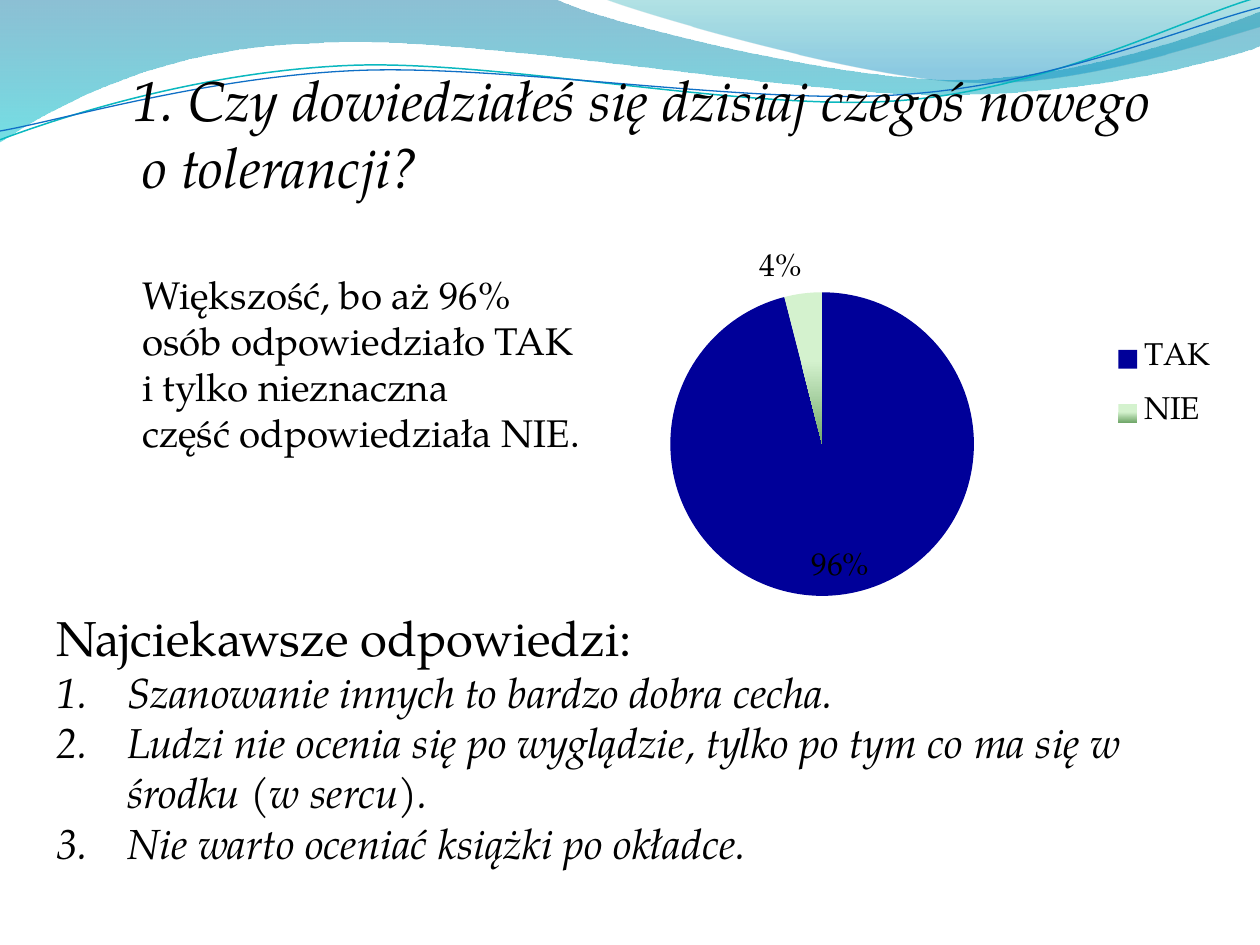
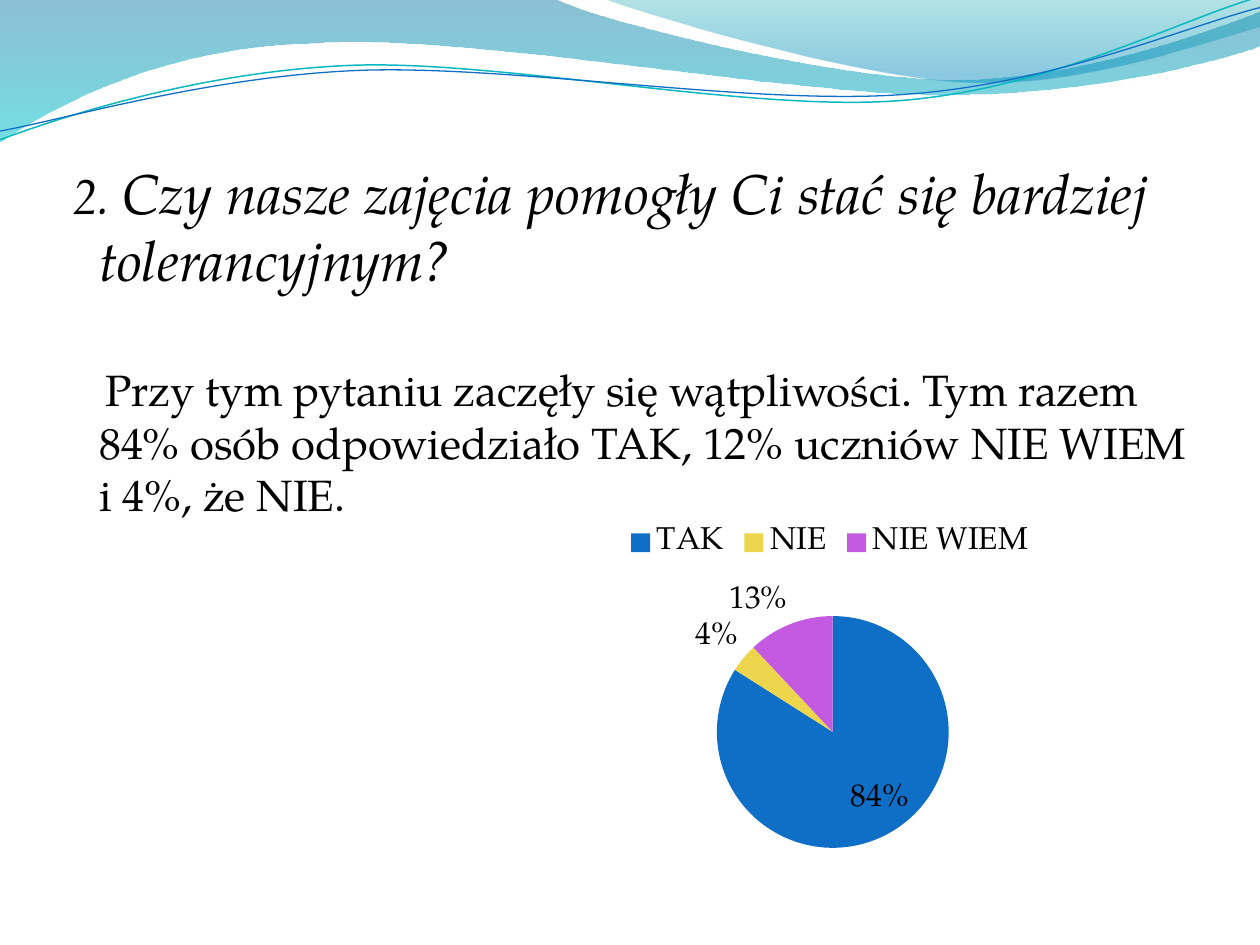
from lxml import etree
from pptx import Presentation
from pptx.chart.data import CategoryChartData
from pptx.dml.color import RGBColor
from pptx.enum.chart import XL_CHART_TYPE, XL_LABEL_POSITION, XL_LEGEND_POSITION
from pptx.enum.text import MSO_ANCHOR, MSO_AUTO_SIZE, PP_ALIGN
from pptx.oxml.ns import qn
from pptx.util import Inches, Pt

PIE = XL_CHART_TYPE.PIE
BEST_FIT = XL_LABEL_POSITION.BEST_FIT
OUTSIDE = XL_LABEL_POSITION.OUTSIDE_END
RIGHT, TOP_LEGEND = XL_LEGEND_POSITION.RIGHT, XL_LEGEND_POSITION.TOP
TOP, LEFT, NO_FIT = MSO_ANCHOR.TOP, PP_ALIGN.LEFT, MSO_AUTO_SIZE.NONE

FONT = "TeX Gyre Pagella"
BLACK = "000000"

WAVE_BANDS = [
    {"start": (0, 0),
     "route": [(4.4, -0.01), (4.76, 0.17, 6.64, 0.63, 7.58, 0.63),
               (8.53, 0.63, 9.58, 0.26, 10, 0.09), (10.01, 0.36),
               (9.83, 0.44, 8.7, 0.76, 7.46, 0.75),
               (6.22, 0.75, 3.82, 0.28, 2.57, 0.34),
               (1.29, 0.36, 0.46, 0.83, -0.01, 1.13), (0, 0)],
     "stops": [(0, "0074A1", 45), (1, "00C6CF", 55)]},
    {"start": (4.79, -0.01),
     "route": [(5.09, 0.11, 6.82, 0.62, 7.69, 0.65),
               (8.56, 0.69, 9.61, 0.32, 10, 0.21), (10, 0), (4.79, -0.01)],
     "stops": [(0, "00A1A9", 30), (0.8, "008BBF", 45)]},
    {"start": (0, 1.11),
     "route": [(0.48, 0.93, 1.58, 0.57, 2.77, 0.52),
               (3.95, 0.47, 5.93, 0.89, 7.13, 0.8),
               (8.33, 0.71, 9.38, 0.15, 9.98, -0.02)],
     "line": ("0AB8BF", 0.85)},
    {"start": (0, 1.04),
     "route": [(0.47, 0.96, 1.64, 0.61, 2.83, 0.56),
               (4.03, 0.51, 5.97, 0.84, 7.17, 0.75),
               (8.36, 0.67, 9.41, 0.21, 10, 0.06)],
     "line": ("0F6FC6", 0.75)},
]

QUESTIONS = [
    {"title": [("1. Czy dowiedziałeś się dzisiaj czegoś nowego o tolerancji?", 32)],
     "title_box": (0.47, 0.47, 9, 1.3), "title_indent": (0.56, -0.08),
     "comment": "Większość, bo aż 96%\vosób odpowiedziało TAK\v"
                "i tylko nieznaczna\vczęść odpowiedziała NIE.",
     "comment_box": (1.03, 2.1, 3.8, 1.7), "comment_size": 22, "comment_indent": (0, 0),
     "chart_box": (4.3, 1.87, 5.43, 2.99), "pie": (5.32, 2.32, 2.41),
     "legend": RIGHT, "legend_box": (8.85, 2.55, 0.85, 1.03),
     "votes": [("TAK", 96, "000099"),
               ("NIE", 4, [(0.45, "D4F2CE"), (1, "72A86B")])],
     "answers": ["Szanowanie innych to bardzo dobra cecha.",
                 "Ludzi nie ocenia się po wyglądzie, tylko po tym co ma się w środku (w sercu).",
                 "Nie warto oceniać książki po okładce."]},
    {"title": [("2. ", 28),
               ("Czy nasze zajęcia pomogły Ci stać się bardziej tolerancyjnym?", 32)],
     "title_box": (0.39, 1.21, 9.24, 1.3), "title_indent": (0.3, -0.21),
     "comment": "Przy tym pytaniu zaczęły się wątpliwości. Tym razem 84% osób "
                "odpowiedziało TAK, 12% uczniów NIE WIEM i 4%, że NIE.",
     "comment_box": (0.39, 2.83, 9.24, 1.35), "comment_size": 25, "comment_indent": (0.3, 0.05),
     "chart_box": (3.91, 4.06, 5.35, 3.04), "pie": (5.69, 4.89, 1.84),
     "legend": TOP_LEGEND,
     "votes": [("TAK", 84, "0F6FC6"), ("NIE", 4, "EDD64D"), ("NIE WIEM", 12, "C35AE0")],
     "shown_labels": {2: "13%"}},
]
ANSWERS_HEADING = "Najciekawsze odpowiedzi:"
ANSWERS_BOX = (0.35, 4.77, 9.29, 2.19)


def color(code):
    return RGBColor.from_string(code)


def inches(box):
    return [Inches(length) for length in box]


def set_font(font, size=None, italic=None):
    font.name = FONT
    font.color.rgb = color(BLACK)
    font.italic = italic
    if size:
        font.size = Pt(size)


def set_indent(paragraph, margin, first_line):
    properties = paragraph._p.get_or_add_pPr()
    properties.set("marL", str(Inches(margin)))
    properties.set("indent", str(Inches(first_line)))
    return properties


def paint_gradient(fill, stops):
    fill.gradient()
    fill.gradient_angle = 270
    for stop, (position, code, *_) in zip(fill.gradient_stops, stops):
        stop.position = position
        stop.color.rgb = color(code)


def bend(wave, route):
    segments = iter(list(wave.element.iter(qn("a:lnTo"))))
    for step in route:
        first = next(segments)
        if len(step) == 6:
            first.tag = qn("a:cubicBezTo")
            for _ in range(2):
                segment = next(segments)
                first.append(segment[0])
                segment.getparent().remove(segment)


def add_waves(slide, layout):
    for depth, band in enumerate(WAVE_BANDS):
        route = band["route"]
        corners = [inches(step[i:i + 2]) for step in route for i in range(0, len(step), 2)]
        outline = slide.shapes.build_freeform(*inches(band["start"]))
        outline.add_line_segments(corners, close="stops" in band)
        wave = outline.convert_to_shape()
        bend(wave, route)
        wave.shadow.inherit = False
        if "stops" in band:
            wave.line.fill.background()
            paint_gradient(wave.fill, band["stops"])
            tints = wave.element.spPr.iter(qn("a:srgbClr"))
            for tint, (_, _, opacity) in zip(tints, band["stops"]):
                etree.SubElement(tint, qn("a:alpha")).set("val", str(opacity * 1000))
        else:
            code, width = band["line"]
            wave.fill.background()
            wave.line.color.rgb = color(code)
            wave.line.width = Pt(width)
        layout.shapes.element.insert(2 + depth, wave.element)


def add_title(slide, question):
    title = slide.shapes.title
    title.left, title.top, title.width, title.height = inches(question["title_box"])
    frame = title.text_frame
    frame.auto_size, frame.vertical_anchor, frame.word_wrap = NO_FIT, TOP, True
    paragraph = frame.paragraphs[0]
    paragraph.alignment = LEFT
    set_indent(paragraph, *question["title_indent"])
    set_font(paragraph.font, italic=True)
    for words, size in question["title"]:
        run = paragraph.add_run()
        run.text = words
        run.font.size = Pt(size)


def add_text(slide, box):
    frame = slide.shapes.add_textbox(*inches(box)).text_frame
    frame.word_wrap = True
    return frame


def add_comment(slide, question):
    paragraph = add_text(slide, question["comment_box"]).paragraphs[0]
    paragraph.text = question["comment"]
    set_font(paragraph.font, question["comment_size"])
    set_indent(paragraph, *question["comment_indent"])


def add_answers(slide, answers):
    frame = add_text(slide, ANSWERS_BOX)
    heading = frame.paragraphs[0]
    heading.text = ANSWERS_HEADING
    set_font(heading.font, 28)
    for answer in answers:
        paragraph = frame.add_paragraph()
        paragraph.text = answer
        set_font(paragraph.font, 24, italic=True)
        properties = set_indent(paragraph, 0.56, -0.56)
        numbering = etree.Element(qn("a:buAutoNum"), type="arabicPeriod")
        properties.insert(0, numbering)


def place_in_chart(part, index, box, chart_box, inner=False):
    for old in part.findall(qn("c:layout")):
        part.remove(old)
    layout = etree.Element(qn("c:layout"))
    manual = etree.SubElement(layout, qn("c:manualLayout"))
    left, top, width, height = box
    chart_left, chart_top, chart_width, chart_height = chart_box
    settings = [("layoutTarget", "inner")] if inner else []
    settings += [("xMode", "edge"), ("yMode", "edge"),
                 ("x", (left - chart_left) / chart_width),
                 ("y", (top - chart_top) / chart_height),
                 ("w", width / chart_width), ("h", height / chart_height)]
    for tag, value in settings:
        etree.SubElement(manual, qn(f"c:{tag}")).set("val", str(value))
    part.insert(index, layout)


def add_pie(slide, question):
    names, shares, paints = zip(*question["votes"])
    votes = CategoryChartData()
    votes.categories = names
    votes.add_series("Series 1", shares)
    chart_box = question["chart_box"]
    chart = slide.shapes.add_chart(PIE, *inches(chart_box), votes).chart
    set_font(chart.font, 18)
    chart.has_title = False
    chart.has_legend = True
    chart.legend.position = question["legend"]
    chart.legend.include_in_layout = False
    if "legend_box" in question:
        place_in_chart(chart.legend._element, 1, question["legend_box"], chart_box)
    left, top, diameter = question["pie"]
    plot_area = chart.element.find(".//" + qn("c:plotArea"))
    place_in_chart(plot_area, 0, (left, top, diameter, diameter), chart_box, inner=True)

    plot = chart.plots[0]
    plot.vary_by_categories = True
    series = plot.series[0]
    for i, paint in enumerate(paints):
        fill = series.points[i].format.fill
        if isinstance(paint, str):
            fill.solid()
            fill.fore_color.rgb = color(paint)
        else:
            paint_gradient(fill, paint)
    labels = series.data_labels
    labels.show_percentage, labels.show_value = True, False
    labels.number_format, labels.number_format_is_linked = "0%", False
    labels.position = BEST_FIT
    set_font(labels.font, 18)
    for i, shown in question.get("shown_labels", {}).items():
        label = series.points[i].data_label
        label.text_frame.text = shown
        set_font(label.text_frame.paragraphs[0].runs[0].font, 18)
        label.position = OUTSIDE


def main():
    prs = Presentation()
    prs.slide_width, prs.slide_height = Inches(10), Inches(7.5)
    layout = prs.slide_layouts[5]
    for number, question in enumerate(QUESTIONS):
        slide = prs.slides.add_slide(layout)
        if number == 0:
            add_waves(slide, layout)
        add_title(slide, question)
        add_comment(slide, question)
        add_pie(slide, question)
        if "answers" in question:
            add_answers(slide, question["answers"])
    prs.save("out.pptx")


if __name__ == "__main__":
    main()
